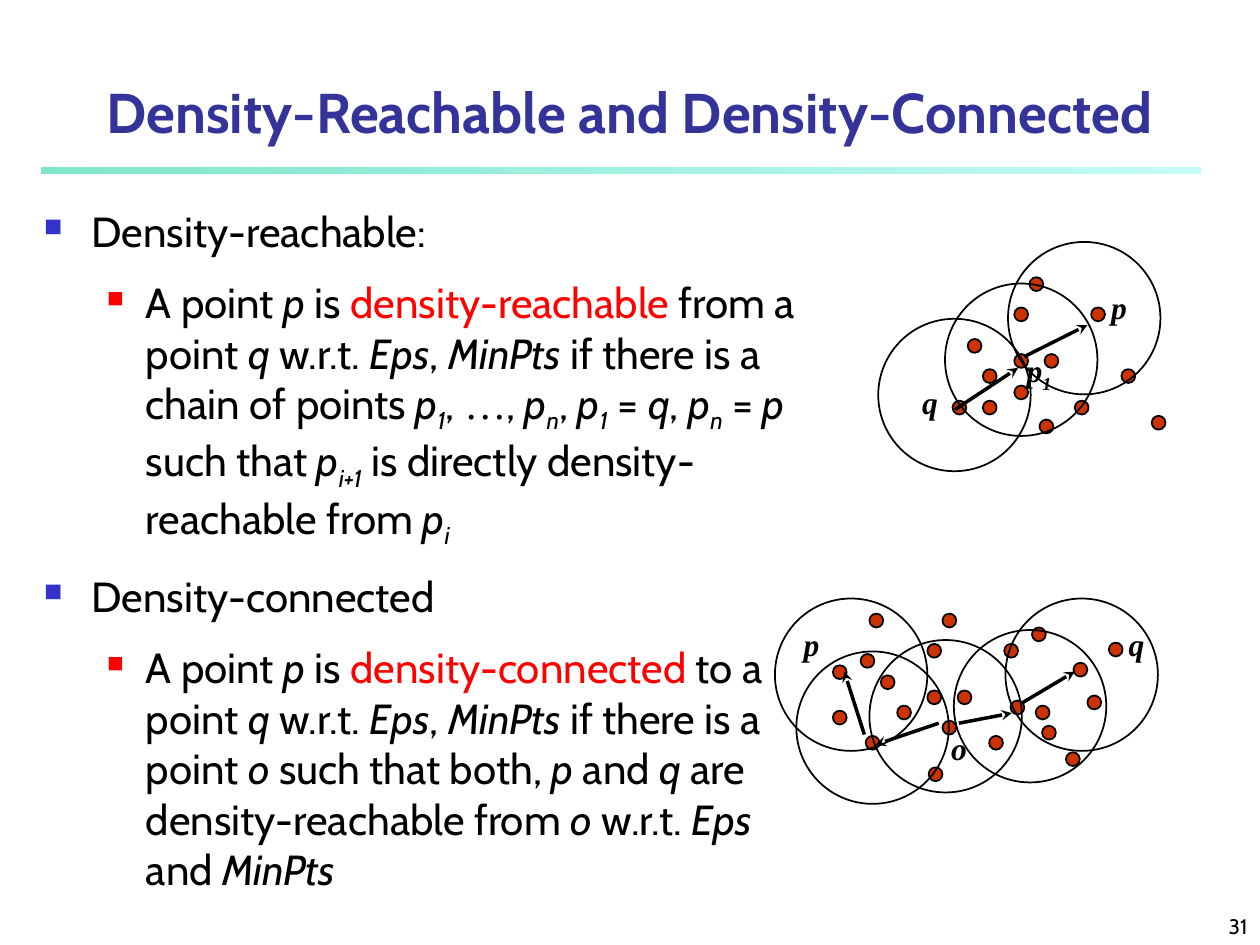
from lxml import etree
from pptx import Presentation
from pptx.dml.color import RGBColor
from pptx.enum.shapes import MSO_CONNECTOR, MSO_SHAPE
from pptx.enum.text import MSO_ANCHOR, PP_ALIGN
from pptx.oxml.ns import qn
from pptx.util import Inches, Pt

OVAL, RECTANGLE = MSO_SHAPE.OVAL, MSO_SHAPE.RECTANGLE
STRAIGHT = MSO_CONNECTOR.STRAIGHT
TOP, MIDDLE, BOTTOM = MSO_ANCHOR.TOP, MSO_ANCHOR.MIDDLE, MSO_ANCHOR.BOTTOM
LEFT, CENTER, RIGHT = PP_ALIGN.LEFT, PP_ALIGN.CENTER, PP_ALIGN.RIGHT

BLACK = RGBColor(0x00, 0x00, 0x00)
RED = RGBColor(0xFF, 0x00, 0x00)
NAVY = RGBColor(0x33, 0x33, 0x99)
BLUE = RGBColor(0x33, 0x33, 0xCC)
RUST = RGBColor(0xCC, 0x33, 0x00)
RULE_STOPS = [(RGBColor(0x00, 0xCE, 0x98), 50), (RGBColor(0x8F, 0xF9, 0xEF), 52)]

SANS, SERIF = "Cabin", "Times New Roman"
DOT, CIRCLE = 0.11, 1.21

TITLE = "Density-Reachable and Density-Connected"
PAGE_NUMBER = "31"

# Runs are split at "|": * italic, _ italic subscript, ! red, ~ serif
BODY = [
    (0, "Density-reachable:"),
    (1, "A point |*p| is |!density-reachable| from a point |*q| w.r.t. |*Eps|, |*MinPts"
        "| if there is a chain of points |*p|_1|, |~…|, |*p|_n|, |*p|_1| = |*q|, |*p|_n"
        "| = |*p| such that |*p|_i+1| is directly density-reachable from |*p|_i"),
    (0, "Density-connected"),
    (1, "A point |*p| is |!density-connected| to a point |*q| w.r.t. |*Eps|, |*MinPts"
        "| if there is a point |*o |such that both, |*p| and |*q"
        "| are density-reachable from |*o| w.r.t. |*Eps| and |*MinPts"),
]
LEVELS = [
    {"margin": 0.38, "hanging": 0.38, "colour": BLUE, "bullet_percent": 60},
    {"margin": 0.81, "hanging": 0.31, "colour": RED, "bullet_percent": 55},
]

REACHABLE = {
    "dots": [(7.68, 2.69), (8.05, 2.81), (8.05, 2.44), (7.56, 3.18), (7.8, 2.93),
             (7.8, 3.18), (8.25, 3.33), (8.17, 2.2), (8.9, 2.93), (8.66, 2.44),
             (8.05, 3.06), (8.29, 2.81), (8.53, 3.18), (9.14, 3.3)],
    "circles": [(7.5, 2.25), (6.97, 2.53), (8, 1.92)],
    "labels": [("*p", 8.72, 2.24, 0.42), ("*q", 7.22, 2.99, 0.42),
               ("*p|_1", 8.05, 2.74, 0.67)],
    "arrows": [((8.13, 2.83), (8.63, 2.58)), ((7.58, 3.25), (8.08, 2.92))],
}
CONNECTED = {
    "dots": [(6.99, 5.36), (7.36, 5.48), (7.36, 5.11), (6.87, 5.84), (7.12, 5.6),
             (7.37, 6.09), (7.48, 5.72), (7.48, 4.87), (8.22, 5.6), (7.97, 5.11),
             (6.61, 5.64), (7.6, 5.48), (7.85, 5.84), (8.46, 5.97), (8.63, 5.52),
             (8.02, 5.56), (8.27, 5.76), (8.8, 5.1), (8.19, 4.98), (8.52, 5.26),
             (6.83, 5.19), (6.61, 5.28), (6.9, 4.87)],
    "circles": [(6.32, 5.17), (6.9, 5.08), (7.57, 5), (7.98, 4.75), (6.15, 4.75)],
    "labels": [("*p", 6.28, 4.91, 0.42), ("*q", 8.86, 4.91, 0.42),
               ("*o", 7.45, 5.74, 0.42)],
    "arrows": [((7.45, 5.74), (6.95, 5.91)), ((7.61, 5.74), (8.03, 5.66)),
               ((6.86, 5.83), (6.7, 5.33)), ((8.11, 5.58), (8.53, 5.33))],
}


def add_runs(paragraph, markup, size, font=SANS, colour=BLACK, bold=False):
    for piece in markup.split("|"):
        mark = piece[0] if piece[0] in "*_!~" else ""
        run = paragraph.add_run()
        run.text = piece[len(mark):]
        run.font.size = Pt(size)
        run.font.name = SERIF if mark == "~" else font
        run.font.color.rgb = RED if mark == "!" else colour
        run.font.bold = bold
        run.font.italic = mark in ("*", "_")
        if mark == "_":
            run.font._element.set("baseline", "-25000")


def add_text_frame(slide, left, top, width, height, anchor=TOP):
    box = slide.shapes.add_textbox(Inches(left), Inches(top), Inches(width), Inches(height))
    box.text_frame.word_wrap = True
    box.text_frame.vertical_anchor = anchor
    return box.text_frame


def add_line_of_text(slide, bounds, markup, size, anchor=TOP, alignment=LEFT, **style):
    paragraph = add_text_frame(slide, *bounds, anchor).paragraphs[0]
    paragraph.alignment = alignment
    add_runs(paragraph, markup, size, **style)


def add_bullet(paragraph, margin, hanging, colour, bullet_percent):
    properties = paragraph._p.get_or_add_pPr()
    properties.set("marL", str(Inches(margin)))
    properties.set("indent", str(-Inches(hanging)))
    bullet_colour = etree.SubElement(properties, qn("a:buClr"))
    etree.SubElement(bullet_colour, qn("a:srgbClr"), val=str(colour))
    etree.SubElement(properties, qn("a:buSzPct"), val=str(bullet_percent * 1000))
    etree.SubElement(properties, qn("a:buChar"), char="■")


def add_body(slide):
    text_frame = add_text_frame(slide, 0.25, 1.58, 6.17, 5.5)
    for index, (level, markup) in enumerate(BODY):
        paragraph = text_frame.add_paragraph() if index else text_frame.paragraphs[0]
        paragraph.level = level
        paragraph.space_before = Pt(12 if index else 0)
        add_bullet(paragraph, **LEVELS[level])
        add_runs(paragraph, markup, 24)


def add_rule(slide):
    rule = slide.shapes.add_shape(RECTANGLE, Inches(0.33), Inches(1.33), Inches(9.2), Inches(0.05))
    rule.shadow.inherit = False
    rule.line.fill.background()
    rule.fill.gradient()
    rule.fill.gradient_angle = 0
    for stop, (colour, _) in zip(rule.fill.gradient_stops, RULE_STOPS):
        stop.color.rgb = colour
    colours = rule._element.spPr.iter(qn("a:srgbClr"))
    for element, (_, opacity) in zip(colours, RULE_STOPS):
        etree.SubElement(element, qn("a:alpha"), val=str(opacity * 1000))


def add_round(slide, left, top, diameter, colour=None):
    shape = slide.shapes.add_shape(
        OVAL, Inches(left), Inches(top), Inches(diameter), Inches(diameter))
    shape.shadow.inherit = False
    if colour is None:
        shape.fill.background()
    else:
        shape.fill.solid()
        shape.fill.fore_color.rgb = colour
    shape.line.color.rgb = BLACK
    shape.line.width = Pt(1)


def add_arrow(slide, start, end):
    arrow = slide.shapes.add_connector(STRAIGHT, *map(Inches, start + end))
    arrow.line.color.rgb = BLACK
    arrow.line.width = Pt(2)
    etree.SubElement(arrow.line._get_or_add_ln(), qn("a:tailEnd"), type="stealth")
    etree.SubElement(arrow._element.spPr, qn("a:effectLst"))


def add_diagram(slide, dots, circles, labels, arrows):
    for left, top in dots:
        add_round(slide, left, top, DOT, RUST)
    for left, top in circles:
        add_round(slide, left, top, CIRCLE)
    for markup, left, top, width in labels:
        add_line_of_text(slide, (left, top, width, 0.5), markup, 18, font=SERIF, bold=True)
    for start, end in arrows:
        add_arrow(slide, start, end)


def main():
    presentation = Presentation()
    presentation.slide_width = Inches(10)
    presentation.slide_height = Inches(7.5)
    slide = presentation.slides.add_slide(presentation.slide_layouts[6])
    add_rule(slide)
    add_line_of_text(slide, (0, 0.42, 10, 0.92), TITLE, 32, MIDDLE, CENTER,
                     colour=NAVY, bold=True)
    add_body(slide)
    add_diagram(slide, **REACHABLE)
    add_diagram(slide, **CONNECTED)
    add_line_of_text(slide, (7.92, 7.08, 2.08, 0.42), PAGE_NUMBER, 12, BOTTOM, RIGHT)
    presentation.save("out.pptx")


if __name__ == "__main__":
    main()
